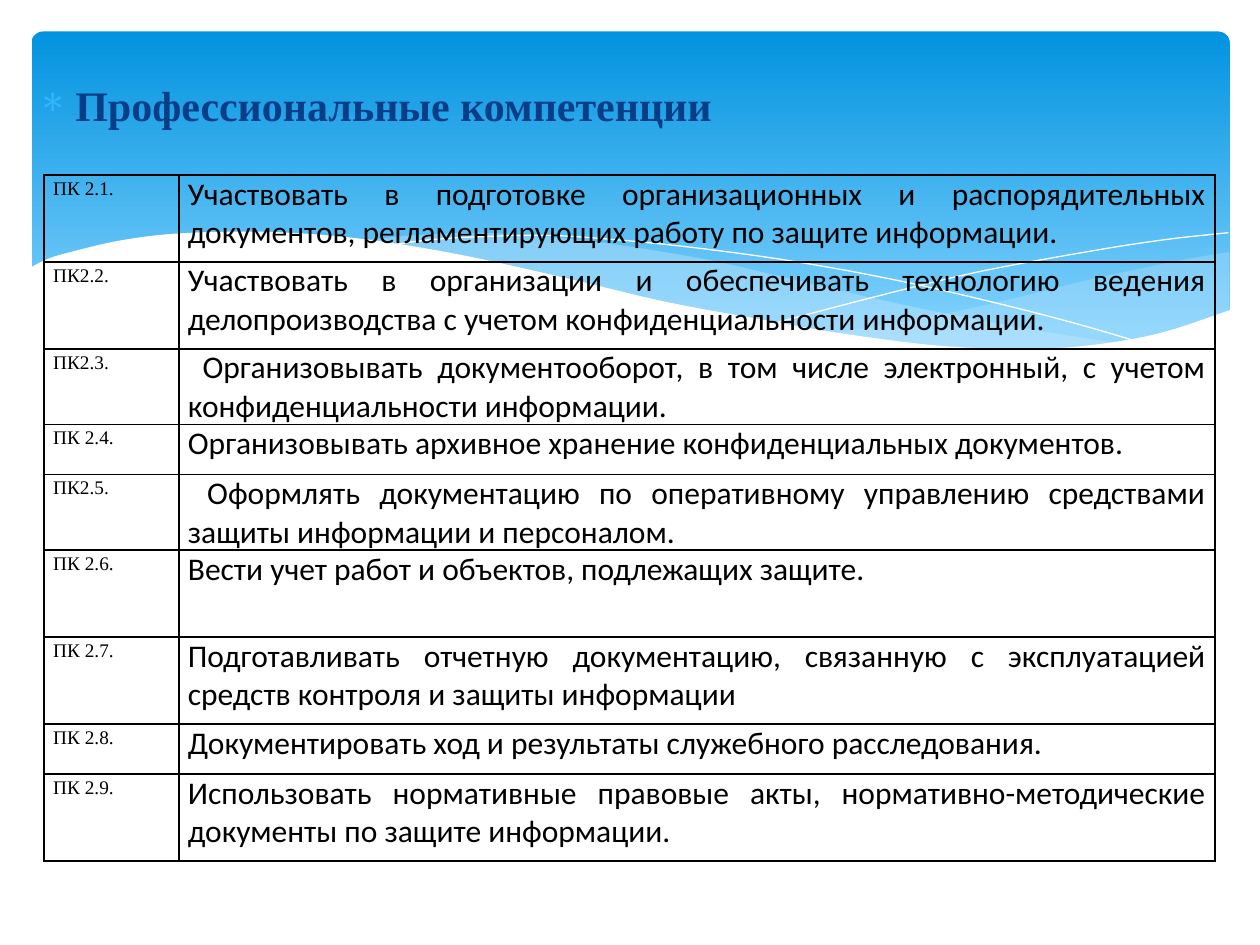
import pptx
import pptx.util
import pptx.dml.color
import pptx.enum.shapes
import pptx.enum.text
import pptx.oxml
import pptx.oxml.ns

Pt = pptx.util.Pt
ALIGN = pptx.enum.text.PP_ALIGN
NS = pptx.oxml.ns.nsdecls("a")

# Wave knots in points, relative to the wave box
RIGHT = [
    [(686, 11.5), (657, 16.5), (603, 28), (563, 38), (508, 50), (459, 58)],
    [(459, 58), (491, 62.5), (528, 66), (570, 67.5), (605, 65.5), (635, 61),
     (662, 54), (686, 45)],
]
MIDDLE = [
    [(626, 64), (586, 58), (541, 50), (492, 40), (436, 27), (393, 17),
     (353.5, 10), (318, 5), (286, 2), (257, 0.5), (220, 2), (189, 5)],
    [(189, 5), (230, 11), (274, 19.5), (307, 27), (365, 40), (416, 51),
     (462, 59), (503, 65), (540, 67), (580, 67.5), (626, 64)],
]
FALL = [(206, 8), (225, 5), (253, 3), (295, 2), (335.5, 4.5), (384, 9.5),
        (441, 17.5), (507, 30), (582, 48), (636.5, 63.5)]
RISE = [(425, 52.5), (484, 37), (542, 23), (607, 11), (649, 4.5), (685.5, 0.5)]
FRONT = [(687, 44.5), (646, 58), (605, 65), (566, 67), (519, 65), (464, 58),
         (418, 50), (364, 40), (305, 26), (246, 13), (194, 4.5), (149, 0.5),
         (111, 0), (78, 1.5), (52, 5), (32, 9.5), (12, 15), (0, 21)]

ROWS = [
    ("ПК 2.1.", "Участвовать в подготовке организационных и распорядительных документов, регламентирующих работу по защите информации.", 49.7),
    ("ПК2.2.", "Участвовать в организации и обеспечивать технологию ведения делопроизводства с учетом конфиденциальности информации.", 49.7),
    ("ПК2.3.", " Организовывать документооборот, в том числе электронный, с учетом конфиденциальности информации.", 28.6),
    ("ПК 2.4.", "Организовывать архивное хранение конфиденциальных документов.", 28.6),
    ("ПК2.5.", " Оформлять документацию по оперативному управлению средствами защиты информации и персоналом.", 28.6),
    ("ПК 2.6.", "Вести учет работ и объектов, подлежащих защите.", 49.7),
    ("ПК 2.7.", "Подготавливать отчетную документацию, связанную с эксплуатацией средств контроля и защиты информации", 49.7),
    ("ПК 2.8.", "Документировать ход и результаты служебного расследования.", 28.6),
    ("ПК 2.9.", "Использовать нормативные правовые акты, нормативно-методические документы по защите информации.", 49.7),
]


def color(code):
    return pptx.dml.color.RGBColor.from_string(code)


def add_run(para, text, size, font, code, bold=False):
    run = para.add_run()
    run.text = text
    run.font.size = Pt(size)
    run.font.name = font
    run.font.bold = bold
    run.font.color.rgb = color(code)


def smooth(knots, steps=5):
    """Points of a Catmull-Rom curve through the knots."""
    ends = [knots[0], *knots, knots[-1]]
    points = [knots[0]]
    for a, b, c, d in zip(ends, ends[1:], ends[2:], ends[3:]):
        for step in range(1, steps + 1):
            t = step / steps
            points.append(tuple(
                (2 * q + (r - p) * t + (2 * p - 5 * q + 4 * r - s) * t ** 2
                 + (3 * q - p - 3 * r + s) * t ** 3) / 2
                for p, q, r, s in zip(a, b, c, d)))
    return points


def add_wave(slide, left, top, points, close=True):
    spots = [(Pt(left + x), Pt(top + y)) for x, y in points]
    pen = slide.shapes.build_freeform(*spots[0])
    pen.add_line_segments(spots[1:], close=close)
    wave = pen.convert_to_shape()
    wave.shadow.inherit = False
    return wave


def fill_wave(wave, code, alpha=100):
    wave.fill.solid()
    wave.fill.fore_color.rgb = color(code)
    wave.line.fill.background()
    if alpha < 100:
        tint = wave.fill._xPr.find(".//" + pptx.oxml.ns.qn("a:srgbClr"))
        tint.append(pptx.oxml.parse_xml(f'<a:alpha {NS} val="{alpha * 1000}"/>'))


def add_panel(slide, left, top, width, height):
    panel = slide.shapes.add_shape(
        pptx.enum.shapes.MSO_SHAPE.ROUNDED_RECTANGLE,
        Pt(left), Pt(top), Pt(width), Pt(height))
    panel.adjustments[0] = 0.034
    panel.shadow.inherit = False
    panel.line.fill.background()
    panel.fill.gradient()
    panel.fill.gradient_angle = 270
    stops = zip(panel.fill.gradient_stops, [(0, "0293E0"), (0.9, "83D3FE")])
    for stop, (place, code) in stops:
        stop.position = place
        stop.color.rgb = color(code)


def add_waves(slide, left, top, width, height):
    for sides, alpha in [(RIGHT, 29), (MIDDLE, 40)]:
        edge = [spot for side in sides for spot in smooth(side)]
        fill_wave(add_wave(slide, left, top, edge), "C6E7FC", alpha)
    for knots in [FALL, RISE]:
        line = add_wave(slide, left, top, smooth(knots), close=False)
        line.fill.background()
        line.line.color.rgb = color("FFFFFF")
        line.line.width = Pt(0)
    base = [(0, height), (width, height)]
    fill_wave(add_wave(slide, left, top, smooth(FRONT) + base), "FFFFFF")


def add_title(slide, left, top, width, height):
    box = slide.shapes.add_textbox(Pt(left), Pt(top), Pt(width), Pt(height))
    box.text_frame.word_wrap = True
    para = box.text_frame.paragraphs[0]
    para.alignment = ALIGN.JUSTIFY
    para.line_spacing = 1.15
    para.space_before = Pt(4.8)
    props = para._p.get_or_add_pPr()
    props.set("marL", str(Pt(21.6)))
    props.set("indent", str(Pt(-21.6)))
    for part in [f'<a:buClr {NS}><a:srgbClr val="31B6FD"/></a:buClr>',
                 f'<a:buChar {NS} char="∗"/>']:
        props.append(pptx.oxml.parse_xml(part))
    add_run(para, "Профессиональные компетенции", 24, "Times New Roman",
            "073E87", bold=True)


def style_cell(cell):
    cell.margin_left = cell.margin_right = Pt(5.2)
    cell.margin_top = cell.margin_bottom = 0
    cell.fill.background()
    props = cell._tc.get_or_add_tcPr()
    for place, side in enumerate("LRTB"):
        props.insert(place, pptx.oxml.parse_xml(
            f'<a:ln{side} {NS} w="{Pt(1)}"><a:solidFill>'
            f'<a:srgbClr val="000000"/></a:solidFill></a:ln{side}>'))


def add_grid(slide, left, top, width, height):
    table = slide.shapes.add_table(
        len(ROWS), 2, Pt(left), Pt(top), Pt(width), Pt(height)).table
    table.first_row = table.horz_banding = False
    table.columns[0].width = Pt(77)
    table.columns[1].width = Pt(width - 77)
    for row, (code, text, tall) in zip(table.rows, ROWS):
        row.height = Pt(tall)
        looks = [(code, 11, "Times New Roman", 1.15), (text, 18, "Calibri", 1)]
        for cell, (words, size, font, space) in zip(row.cells, looks):
            style_cell(cell)
            para = cell.text_frame.paragraphs[0]
            para.alignment = ALIGN.JUSTIFY
            para.line_spacing = float(space)
            add_run(para, words, size, font, "000000")


def main():
    deck = pptx.Presentation()
    deck.slide_width, deck.slide_height = Pt(720), Pt(540)
    slide = deck.slides.add_slide(deck.slide_layouts[6])
    add_panel(slide, 18, 18, 684.7, 194.4)
    add_waves(slide, 16.5, 132.5, 687, 104.5)
    add_title(slide, 14.4, 37.4, 692, 487.4)
    add_grid(slide, 25.2, 100, 669, 391.7)
    deck.save("out.pptx")


if __name__ == "__main__":
    main()
